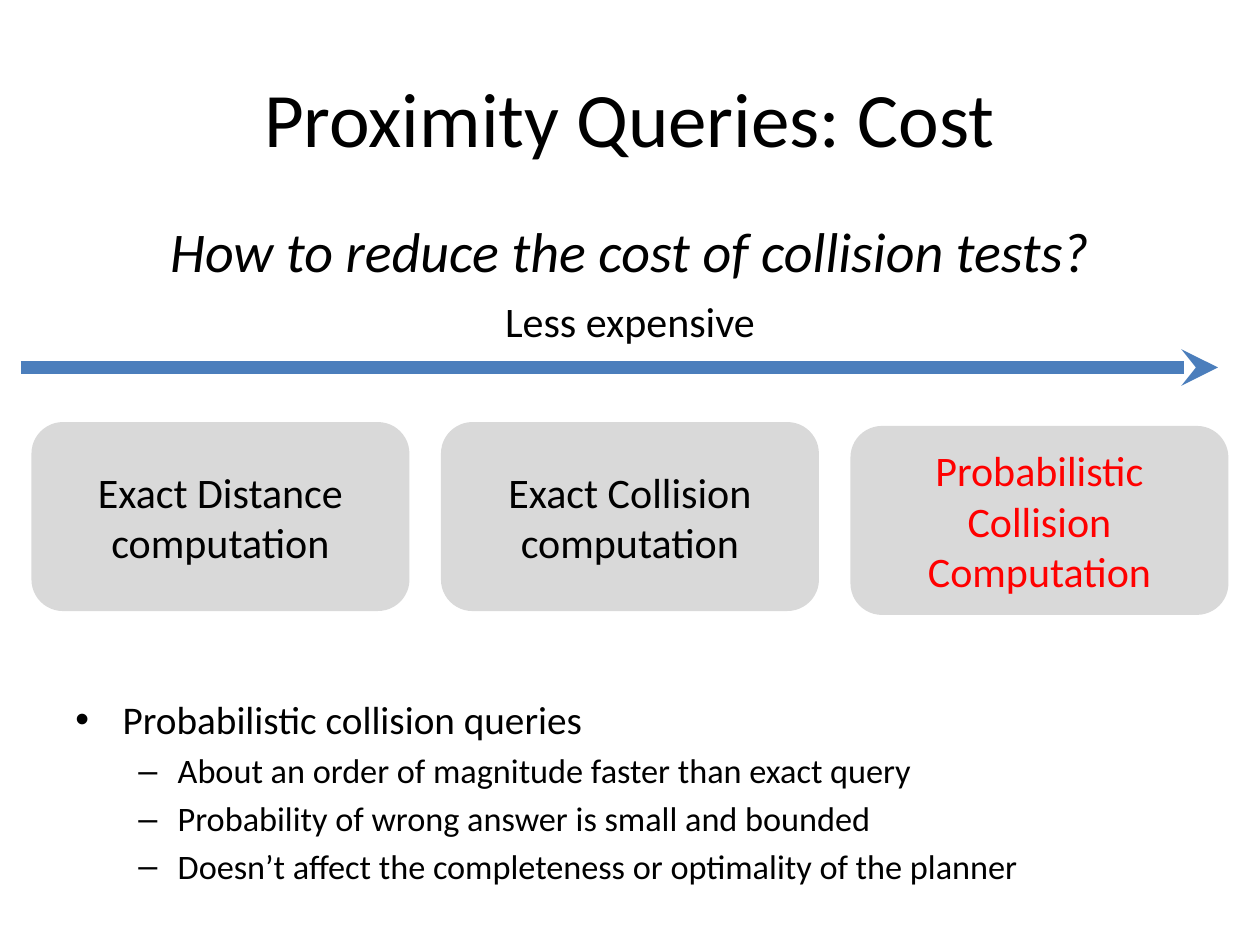
from pptx import Presentation
from pptx.util import Pt
from pptx.dml.color import RGBColor
from pptx.enum.shapes import MSO_SHAPE, MSO_CONNECTOR
from pptx.enum.text import PP_ALIGN, MSO_ANCHOR
from pptx.oxml.ns import qn
from lxml.etree import SubElement

COLORS = {"text": "000000", "accent": "FF0000", "box": "D9D9D9", "arrow": "4B7EBC"}
FONT = "Calibri"
TITLE = "Proximity Queries: Cost"
QUESTION = "How to reduce the cost of collision tests?"
ARROW_LABEL = "Less expensive"
METHODS = [
    ("Exact Distance computation", "text", 241.2),
    ("Exact Collision computation", "text", 241.2),
    ("Probabilistic Collision Computation", "accent", 243.4),
]
BULLETS = [
    (0, "Probabilistic collision queries"),
    (1, "About an order of magnitude faster than exact query"),
    (1, "Probability of wrong answer is small and bounded"),
    (1, "Doesn’t affect the completeness or optimality of the planner"),
]
LEVELS = [("•", 22.4, 27, -27), ("–", 19.6, 58.5, -22.5)]
BOX_LEFT, BOX_W, BOX_H, BOX_GAP = 18, 216, 108, 18


def rgb(name):
    return RGBColor.from_string(COLORS[name])


def style(p, size, color="text", align=PP_ALIGN.CENTER, italic=False):
    p.alignment = align
    for r in p.runs:
        r.font.name = FONT
        r.font.size = Pt(size)
        r.font.italic = italic
        r.font.color.rgb = rgb(color)


def add_text(s, x, y, w, h, wrap=True):
    tf = s.shapes.add_textbox(Pt(x), Pt(y), Pt(w), Pt(h)).text_frame
    tf.word_wrap = wrap
    return tf


def add_bullet(p, level, text):
    char, size, margin, indent = LEVELS[level]
    p.text = text
    p.level = level
    p.space_before = Pt(round(size * 0.2, 1))
    style(p, size, align=PP_ALIGN.LEFT)
    pPr = p._p.get_or_add_pPr()
    pPr.set("marL", str(Pt(margin)))
    pPr.set("indent", str(Pt(indent)))
    SubElement(pPr, qn("a:buFont")).set("typeface", "Arial")
    SubElement(pPr, qn("a:buChar")).set("char", char)


def add_arrow(s, x1, x2, y):
    line = s.shapes.add_connector(MSO_CONNECTOR.STRAIGHT, Pt(x1), Pt(y), Pt(x2), Pt(y))
    line.line.color.rgb = rgb("arrow")
    line.line.width = Pt(7)
    SubElement(line.line._get_or_add_ln(), qn("a:tailEnd")).set("type", "stealth")
    SubElement(line._element.spPr, qn("a:effectLst"))


def add_box(s, x, y, text, color):
    sp = s.shapes.add_shape(MSO_SHAPE.ROUNDED_RECTANGLE, Pt(x), Pt(y), Pt(BOX_W), Pt(BOX_H))
    sp.shadow.inherit = False
    sp.fill.solid()
    sp.fill.fore_color.rgb = rgb("box")
    sp.line.fill.background()
    tf = sp.text_frame
    tf.word_wrap = True
    tf.vertical_anchor = MSO_ANCHOR.MIDDLE
    tf.text = text
    style(tf.paragraphs[0], 24, color)


def main():
    prs = Presentation()
    prs.slide_width, prs.slide_height = Pt(720), Pt(540)
    s = prs.slides.add_slide(prs.slide_layouts[5])

    title = s.shapes.title
    title.left, title.top, title.width, title.height = Pt(36), Pt(21.6), Pt(648), Pt(90)
    title.text_frame.text = TITLE
    title.text_frame.vertical_anchor = MSO_ANCHOR.MIDDLE
    style(title.text_frame.paragraphs[0], 44)

    tf = add_text(s, 36, 120, 648, 40)
    tf.text = QUESTION
    tf.paragraphs[0].space_before = Pt(6.4)
    style(tf.paragraphs[0], 32, italic=True)

    tf = add_text(s, 281.5, 165.6, 159, 36, wrap=False)
    tf.text = ARROW_LABEL
    style(tf.paragraphs[0], 24, align=PP_ALIGN.LEFT)

    tf = add_text(s, 36, 394, 648, 110)
    for i, (level, text) in enumerate(BULLETS):
        add_bullet(tf.add_paragraph() if i else tf.paragraphs[0], level, text)

    add_arrow(s, 12, 696, 210)
    for i, (text, color, y) in enumerate(METHODS):
        add_box(s, BOX_LEFT + i * (BOX_W + BOX_GAP), y, text, color)

    prs.save("out.pptx")


if __name__ == "__main__":
    main()
